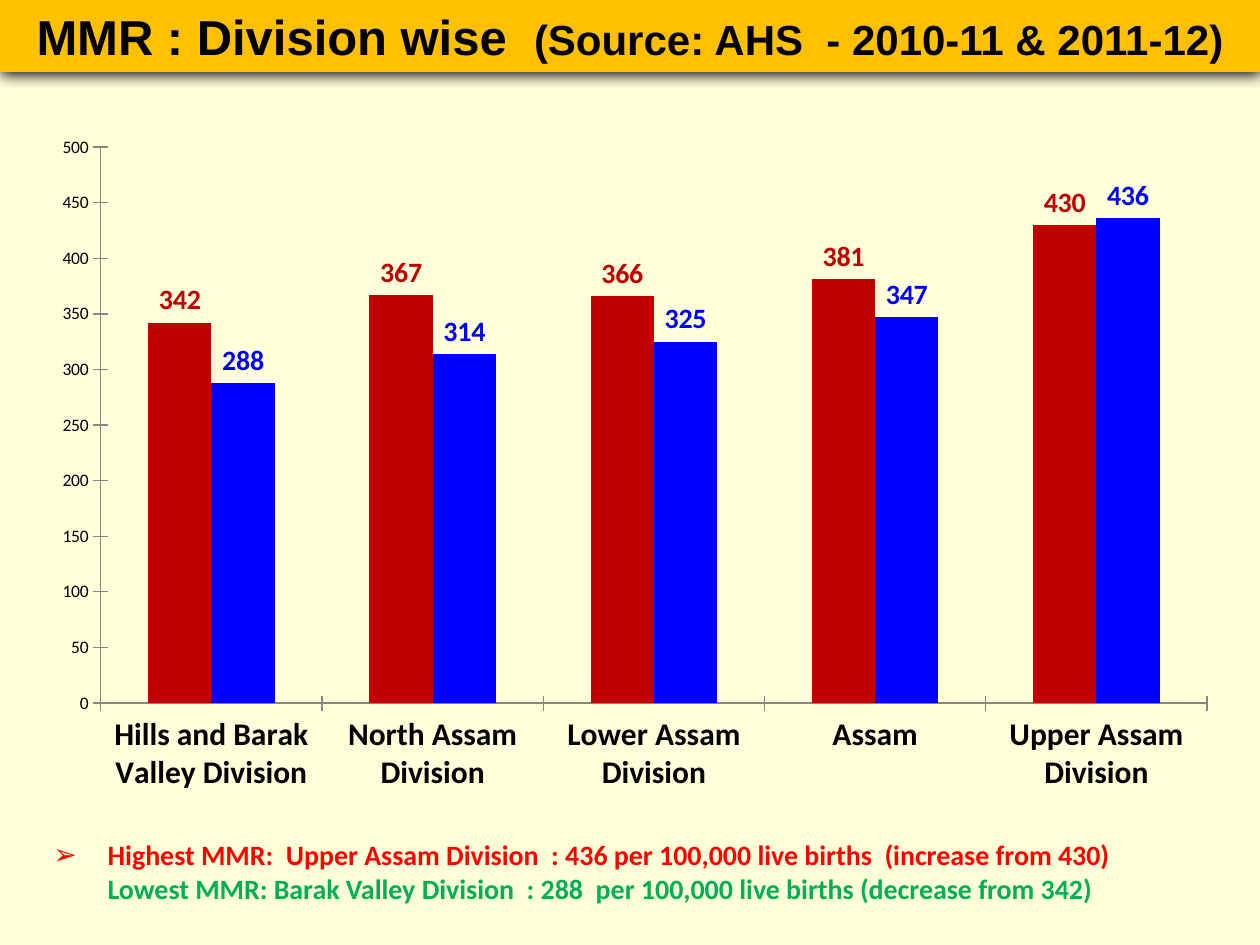
"""Build the slide on maternal mortality by division."""
from lxml.etree import SubElement
from pptx import Presentation
from pptx.chart.data import CategoryChartData
from pptx.dml.color import RGBColor
from pptx.enum.chart import XL_CHART_TYPE, XL_LABEL_POSITION, XL_TICK_MARK
from pptx.enum.shapes import MSO_SHAPE
from pptx.enum.text import MSO_ANCHOR, MSO_AUTO_SIZE, PP_ALIGN
from pptx.oxml import parse_xml
from pptx.oxml.ns import nsdecls, qn
from pptx.util import Pt

PX = 914400 / 126
COLORS = {
    "back": "FFFFDA", "banner": "FFC000", "text": "000000", "axis": "868686",
    "first": "C00000", "second": "0000FF", "high": "FF0000", "low": "00B050",
}


def box(*sides):
    return [round(side * PX) for side in sides]


def style(font, size, color, bold=True, face="Calibri"):
    font.size = Pt(size)
    font.bold = bold
    font.name = face
    font.color.rgb = RGBColor.from_string(COLORS[color])


prs = Presentation()
prs.slide_width, prs.slide_height = box(1260, 945)
slide = prs.slides.add_slide(prs.slide_layouts[5])
back = slide.background.fill
back.solid()
back.fore_color.rgb = RGBColor.from_string(COLORS["back"])

title = slide.shapes.title
title.left, title.top, title.width, title.height = box(32, 819, 1197, 105)
frame = title.text_frame
frame.word_wrap = True
frame.vertical_anchor = MSO_ANCHOR.MIDDLE
para = frame.paragraphs[0]
para.alignment = PP_ALIGN.LEFT
props = para._p.get_or_add_pPr()
indent, hang = box(63, -54)
props.set("marL", str(indent))
props.set("indent", str(hang))
SubElement(props, qn("a:buFont")).set("typeface", "Arial")
SubElement(props, qn("a:buChar")).set("char", "➢")
high = para.add_run()
high.text = "Highest MMR:  Upper Assam Division  : 436 per 100,000 live births  (increase from 430)"
style(high.font, 16, "high")
para.add_line_break()
low = para.add_run()
low.text = "Lowest MMR: Barak Valley Division  : 288  per 100,000 live births (decrease from 342)"
style(low.font, 16, "low")

data = CategoryChartData()
data.categories = [
    "Hills and Barak Valley Division", "North Assam Division",
    "Lower Assam Division", "Assam", "Upper Assam Division",
]
data.add_series("2010-11", (342, 367, 366, 381, 430))
data.add_series("2011-12", (288, 314, 325, 347, 436))
chart = slide.shapes.add_chart(
    XL_CHART_TYPE.COLUMN_CLUSTERED, *box(32, 116, 1187, 725), data
).chart
chart.has_title = False
chart.has_legend = False
style(chart.font, 10, "text", False)

plot = chart.plots[0]
plot.gap_width = 150
plot.overlap = 0
plot.vary_by_categories = False
for series, color in zip(plot.series, ("first", "second")):
    series.format.fill.solid()
    series.format.fill.fore_color.rgb = RGBColor.from_string(COLORS[color])
    labels = series.data_labels
    labels.show_value = True
    labels.position = XL_LABEL_POSITION.OUTSIDE_END
    style(labels.font, 16, color)

scale = chart.value_axis
scale.minimum_scale, scale.maximum_scale, scale.major_unit = 0, 500, 50
scale.has_major_gridlines = False
for axis in (scale, chart.category_axis):
    axis.major_tick_mark = XL_TICK_MARK.CROSS
    axis.format.line.color.rgb = RGBColor.from_string(COLORS["axis"])
    axis.format.line.width = Pt(0.75)
style(chart.category_axis.tick_labels.font, 18, "text")

area = chart._chartSpace.chart.plotArea
for old in area.findall(qn("c:layout")):
    area.remove(old)
layout = parse_xml(f"<c:layout {nsdecls('c')}/>")
area.insert(0, layout)
manual = SubElement(layout, qn("c:manualLayout"))
for tag, value in (
    ("layoutTarget", "inner"), ("xMode", "edge"), ("yMode", "edge"),
    ("x", "0.058"), ("y", "0.043"), ("w", "0.932"), ("h", "0.767"),
):
    SubElement(manual, qn(f"c:{tag}")).set("val", value)

banner = slide.shapes.add_shape(MSO_SHAPE.RECTANGLE, *box(0, 0, 1260, 72))
banner.fill.solid()
banner.fill.fore_color.rgb = RGBColor.from_string(COLORS["banner"])
banner.line.fill.background()
banner.shadow.inherit = False
glow = SubElement(
    banner._element.spPr.find(qn("a:effectLst")), qn("a:outerShdw"),
    blurRad=str(Pt(8.5)), dist=str(Pt(1)), dir="5400000",
    algn="t", rotWithShape="0",
)
SubElement(glow, qn("a:srgbClr")).set("val", COLORS["text"])
frame = banner.text_frame
frame.word_wrap = True
frame.auto_size = MSO_AUTO_SIZE.SHAPE_TO_FIT_TEXT
para = frame.paragraphs[0]
para.alignment = PP_ALIGN.CENTER
for text, size in (
    ("MMR : Division wise  ", 28),
    ("(Source: AHS  - 2010-11 & 2011-12)", 24),
):
    run = para.add_run()
    run.text = text
    style(run.font, size, "text", face="Arial")

prs.save("out.pptx")
